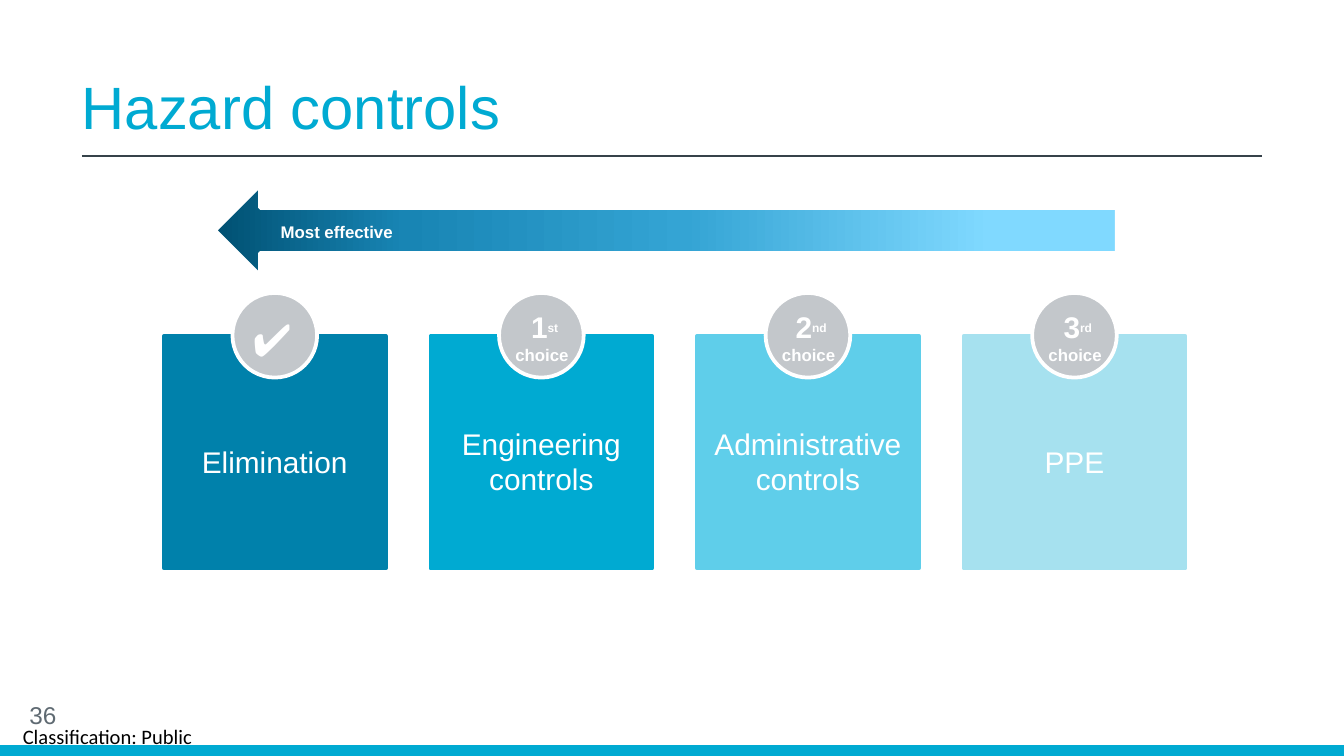
import pptx
import pptx.dml.color
import pptx.enum.shapes
import pptx.enum.text
import pptx.oxml
import pptx.oxml.ns
import pptx.util

Inches = pptx.util.Inches
Pt = pptx.util.Pt
Shapes = pptx.enum.shapes.MSO_SHAPE
Anchor = pptx.enum.text.MSO_ANCHOR
Align = pptx.enum.text.PP_ALIGN
qn = pptx.oxml.ns.qn

SLIDE_WIDTH = 10
SLIDE_HEIGHT = SLIDE_WIDTH * 9 / 16
COLORS = {
    "accent": "00AAD2",
    "rule": "36424A",
    "number": "5F6A72",
    "badge": "C3C7CB",
    "white": "FFFFFF",
    "black": "000000",
    "elimination": "0081AB",
    "engineering": "00AAD2",
    "administrative": "5FCEEA",
    "ppe": "A6E1EF",
}
ARROW_STOPS = [(14, "80D9FF"), (48, "34A4D4"), (79, "1885B4"), (100, "005072")]
CONTROLS = [
    ("Elimination", 1, "elimination", None),
    ("Engineering controls", 2, "engineering", ("1", "st")),
    ("Administrative controls", 2, "administrative", ("2", "nd")),
    ("PPE", 1, "ppe", ("3", "rd")),
]


def rgb(name):
    return pptx.dml.color.RGBColor.from_string(COLORS[name])


def style_font(font, size, color, name="Arial", bold=None):
    font.name = name
    font.size = Pt(size)
    font.color.rgb = rgb(color)
    font.bold = bold


def set_insets(frame, left, right):
    frame.margin_left = Inches(left)
    frame.margin_right = Inches(right)
    frame.margin_top = frame.margin_bottom = 0


def add_text(slide, box, text, size, color, anchor=Anchor.TOP, align=Align.LEFT,
             name="Arial", bold=None):
    shape = slide.shapes.add_textbox(*map(Inches, box))
    frame = shape.text_frame
    frame.word_wrap = True
    frame.vertical_anchor = anchor
    paragraph = frame.paragraphs[0]
    paragraph.text = text
    paragraph.alignment = align
    style_font(paragraph.font, size, color, name, bold)
    return frame


def add_filled(slide, kind, box, fill, line=None):
    shape = slide.shapes.add_shape(kind, *map(Inches, box))
    shape.shadow.inherit = False
    shape.fill.solid()
    shape.fill.fore_color.rgb = rgb(fill)
    if line:
        shape.line.color.rgb = rgb(line)
        shape.line.width = Pt(2)
    else:
        shape.line.fill.background()
    return shape


def add_header(slide, box):
    left, top, width, height = box
    add_text(slide, (left - 0.1, top, width + 0.2, height), "Hazard controls",
             32, "accent", Anchor.BOTTOM)
    rule_top = Inches(top + height + 0.06)
    rule = slide.shapes.add_connector(
        pptx.enum.shapes.MSO_CONNECTOR.STRAIGHT,
        Inches(left), rule_top, Inches(left + width), rule_top)
    rule.line.color.rgb = rgb("rule")
    rule.line.width = Pt(0.75)
    rule._element.spPr.append(pptx.oxml.parse_xml(
        f'<a:effectLst {pptx.oxml.ns.nsdecls("a")}/>'))


def add_footer(slide, box):
    left, top, width, height = box
    bar = 0.08
    add_filled(slide, Shapes.RECTANGLE, (left, top + height - bar, width, bar), "accent")
    classification = add_text(slide, (left, top + 0.15, 1.6, 0.31),
                              "Classification: Public", 11, "black",
                              Anchor.MIDDLE, Align.CENTER, "Calibri")
    set_insets(classification, 0, 0)
    add_text(slide, (left + 0.12, top, 2.25, 0.3), "36", 13, "number", Anchor.MIDDLE)


def add_effectiveness_arrow(slide, box):
    left, top, width, height = box
    arrow = slide.shapes.add_shape(
        Shapes.DOWN_ARROW,
        Inches(left + (width - height) / 2), Inches(top + (height - width) / 2),
        Inches(height), Inches(width))
    arrow.rotation = 90
    arrow.shadow.inherit = False
    arrow.line.color.rgb = rgb("white")
    arrow.line.width = Pt(2)
    arrow.fill.gradient()
    arrow.fill.gradient_angle = 270
    stops = arrow._element.spPr.find(qn("a:gradFill")).find(qn("a:gsLst"))
    for stop in list(stops):
        stops.remove(stop)
    for position, color in ARROW_STOPS:
        stops.append(pptx.oxml.parse_xml(
            f'<a:gs {pptx.oxml.ns.nsdecls("a")} pos="{position * 1000}">'
            f'<a:srgbClr val="{color}"/></a:gs>'))
    add_text(slide, (left + 0.39, top + 0.22, 1.07, 0.25), "Most effective",
             9, "white", bold=True)


def add_badge(slide, box, rank):
    badge = add_filled(slide, Shapes.OVAL, box, "badge", "white")
    frame = badge.text_frame
    frame.vertical_anchor = Anchor.BOTTOM
    first = frame.paragraphs[0]
    first.alignment = Align.CENTER
    if rank is None:
        set_insets(frame, 0.04, 0.08)
        parts = [(" ", 20), ("✔", 24)]
    else:
        set_insets(frame, 0.01, 0)
        parts = [(" ", 10), (rank[0], 16), (rank[1], 11)]
    for text, size in parts:
        run = first.add_run()
        run.text = text
        style_font(run.font, size, "white", bold=True if rank else None)
    if rank:
        run.font._element.set("baseline", "30000")
        choice = frame.add_paragraph()
        choice.text = "choice"
        choice.alignment = Align.CENTER
        style_font(choice.font, 9, "white", bold=True)


def add_control(slide, box, label, lines, color, rank):
    left, top, width, height = box
    add_filled(slide, Shapes.RECTANGLE, box, color, color)
    diameter = 0.63
    add_badge(slide, (left + (width - diameter) / 2, top - 0.32,
                      diameter, diameter), rank)
    label_height = 0.1 + 0.27 * lines
    label_top = top + height / 2 + 0.07 - label_height / 2
    add_text(slide, (left + 0.01, label_top, width - 0.02, label_height),
             label, 16, "white", align=Align.CENTER)


def add_controls(slide, box):
    left, top, width, height = box
    card_width = 1.65
    pitch = (width - card_width) / (len(CONTROLS) - 1)
    for index, control in enumerate(CONTROLS):
        add_control(slide, (left + index * pitch, top, card_width, height), *control)


def main():
    presentation = pptx.Presentation()
    presentation.slide_width = Inches(SLIDE_WIDTH)
    presentation.slide_height = Inches(SLIDE_HEIGHT)
    slide = presentation.slides.add_slide(presentation.slide_layouts[6])
    add_footer(slide, (0, 5.17, SLIDE_WIDTH, SLIDE_HEIGHT - 5.17))
    add_header(slide, (0.61, 0.48, 8.78, 0.62))
    add_controls(slide, (1.22, 2.5, 7.6, 1.73))
    add_effectiveness_arrow(slide, (1.6, 1.38, 6.71, 0.67))
    presentation.save("out.pptx")


if __name__ == "__main__":
    main()
